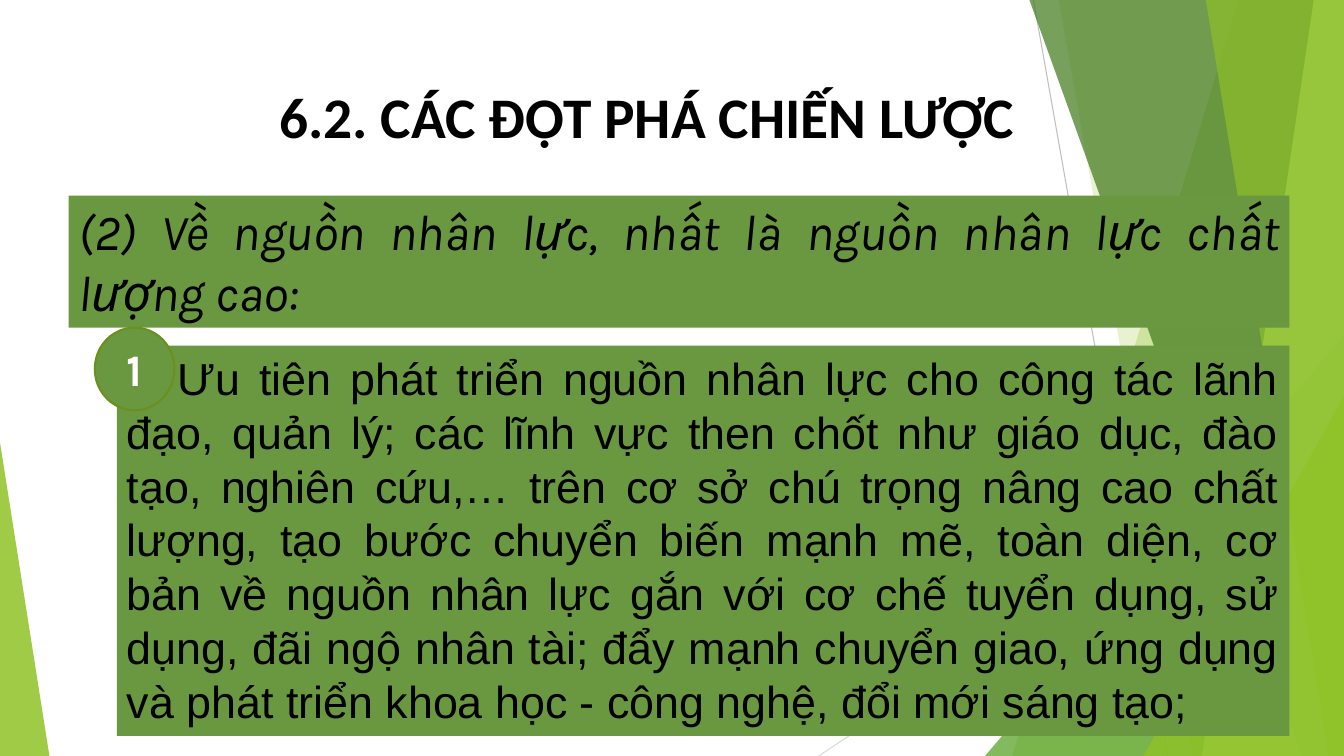
from dataclasses import dataclass
from lxml import etree
from pptx import Presentation
from pptx.dml.color import RGBColor
from pptx.enum import shapes, text
from pptx.oxml import ns
from pptx.util import Inches, Pt


@dataclass(frozen=True)
class Theme:
    lime: str = "90C226"
    leaf: str = "54A021"
    pine: str = "3F7819"
    pale: str = "C0E474"
    panel: str = "699841"
    rim: str = "6B901C"
    ink: str = "000000"
    white: str = "FFFFFF"
    lines: tuple = ("BFBFBF", "D9D9D9")
    title: int = 41
    head: int = 36
    body: int = 32
    sans: str = "Calibri"
    plain: str = "Arial"
    face: str = "Karla"


THEME = Theme()
ALIGN = text.PP_ALIGN
KIND = shapes.MSO_SHAPE


def paint(shape, color, alpha=100):
    shape.shadow.inherit = False
    shape.line.fill.background()
    shape.fill.solid()
    shape.fill.fore_color.rgb = RGBColor.from_string(color)
    if alpha < 100:
        node = shape.fill._xPr.find(".//" + ns.qn("a:srgbClr"))
        etree.SubElement(node, ns.qn("a:alpha"), val=str(alpha * 1000))


def write(shape, words, size, font, color, align, anchor, bold=False, italic=False):
    frame = shape.text_frame
    frame.word_wrap = True
    frame.vertical_anchor = anchor
    para = frame.paragraphs[0]
    para.alignment = align
    run = para.add_run()
    run.text = words
    run.font.size = Pt(size)
    run.font.name = font
    run.font.bold = bold
    run.font.italic = italic
    run.font.color.rgb = RGBColor.from_string(color)
    return para


def add_block(slide, kind, box, color, alpha=100):
    shape = slide.shapes.add_shape(kind, *map(Inches, box))
    paint(shape, color, alpha)
    return shape


def add_backdrop(slide, box):
    left, top, width, height = box
    right, foot = left + width, top + height

    def ray(start, end, color):
        ends = [Inches(n) for n in start + end]
        line = slide.shapes.add_connector(shapes.MSO_CONNECTOR.STRAIGHT, *ends)
        line.line.color.rgb = RGBColor.from_string(color)
        line.line.width = Pt(0.75)
        etree.SubElement(line._element.spPr, ns.qn("a:effectLst"))

    def band(upper, lower, color, alpha):
        spots = [(left + upper, top), (right, top), (right, foot), (left + lower, foot)]
        spots = [(Inches(x), Inches(y)) for x, y in spots]
        build = slide.shapes.build_freeform(*spots[0])
        build.add_line_segments(spots[1:], close=True)
        paint(build.convert_to_shape(), color, alpha)

    def peak(x, y, wide, tip, color, alpha):
        area = (left + x, top + y, wide, height - y)
        shape = add_block(slide, KIND.ISOSCELES_TRIANGLE, area, color, alpha)
        shape.adjustments[0] = tip

    ray((left + 10.25, top), (left + 11.58, foot), THEME.lines[0])
    ray((right, top + 4.03), (left + 8.12, foot), THEME.lines[1])
    band(12.28, 10.04, THEME.lime, 30)
    band(10.5, 11.83, THEME.lime, 20)
    peak(9.77, 3.33, width - 9.77, 1, THEME.leaf, 72)
    band(10.21, 12.91, THEME.pine, 70)
    band(13.03, 11.92, THEME.pale, 70)
    band(11.96, 13.18, THEME.lime, 65)
    peak(11.34, 3.93, width - 11.34, 1, THEME.lime, 80)
    peak(0, 4.39, 0.49, 0, THEME.lime, 85)


def add_title(slide, box, words):
    shape = slide.shapes.add_textbox(*map(Inches, box))
    write(shape, words, THEME.title, THEME.sans, THEME.ink,
          ALIGN.CENTER, text.MSO_ANCHOR.MIDDLE, bold=True)


def add_point(slide, box, mark, head, body):
    left, top, width, height = box
    inset, drop = 0.48, 1.49

    area = (left + inset, top + drop, width - inset, height - drop)
    panel = add_block(slide, KIND.RECTANGLE, area, THEME.panel)
    para = write(panel, body, THEME.body, THEME.plain, THEME.ink,
                 ALIGN.JUSTIFY, text.MSO_ANCHOR.TOP)
    para._p.get_or_add_pPr().set("indent", str(Inches(0.5)))

    banner = add_block(slide, KIND.RECTANGLE, (left, top, width, 1.31), THEME.panel)
    write(banner, head, THEME.head, THEME.face, THEME.ink,
          ALIGN.JUSTIFY, text.MSO_ANCHOR.TOP, italic=True)

    badge = add_block(slide, KIND.OVAL, (left + 0.26, top + 1.31, 0.79, 0.82), THEME.panel)
    badge.line.color.rgb = RGBColor.from_string(THEME.rim)
    badge.line.width = Pt(1.5)
    write(badge, mark, THEME.body, THEME.face, THEME.white,
          ALIGN.CENTER, text.MSO_ANCHOR.MIDDLE, bold=True)


def main():
    deck = Presentation()
    deck.slide_width, deck.slide_height = Inches(13.33), Inches(7.5)
    slide = deck.slides.add_slide(deck.slide_layouts[6])
    add_backdrop(slide, (0, 0, 13.33, 7.5))
    add_title(slide, (0.68, 0.58, 11.48, 1.14), "6.2. CÁC ĐỘT PHÁ CHIẾN LƯỢC")
    add_point(
        slide, (0.68, 1.94, 12.11, 5.36), "1",
        "(2) Về nguồn nhân lực, nhất là nguồn nhân lực chất lượng cao:",
        "Ưu tiên phát triển nguồn nhân lực cho công tác lãnh đạo, quản lý; "
        "các lĩnh vực then chốt như giáo dục, đào tạo, nghiên cứu,… trên cơ sở "
        "chú trọng nâng cao chất lượng, tạo bước chuyển biến mạnh mẽ, toàn diện, "
        "cơ bản về nguồn nhân lực gắn với cơ chế tuyển dụng, sử dụng, đãi ngộ "
        "nhân tài; đẩy mạnh chuyển giao, ứng dụng và phát triển khoa học - công "
        "nghệ, đổi mới sáng tạo;",
    )
    deck.save("out.pptx")


if __name__ == "__main__":
    main()
